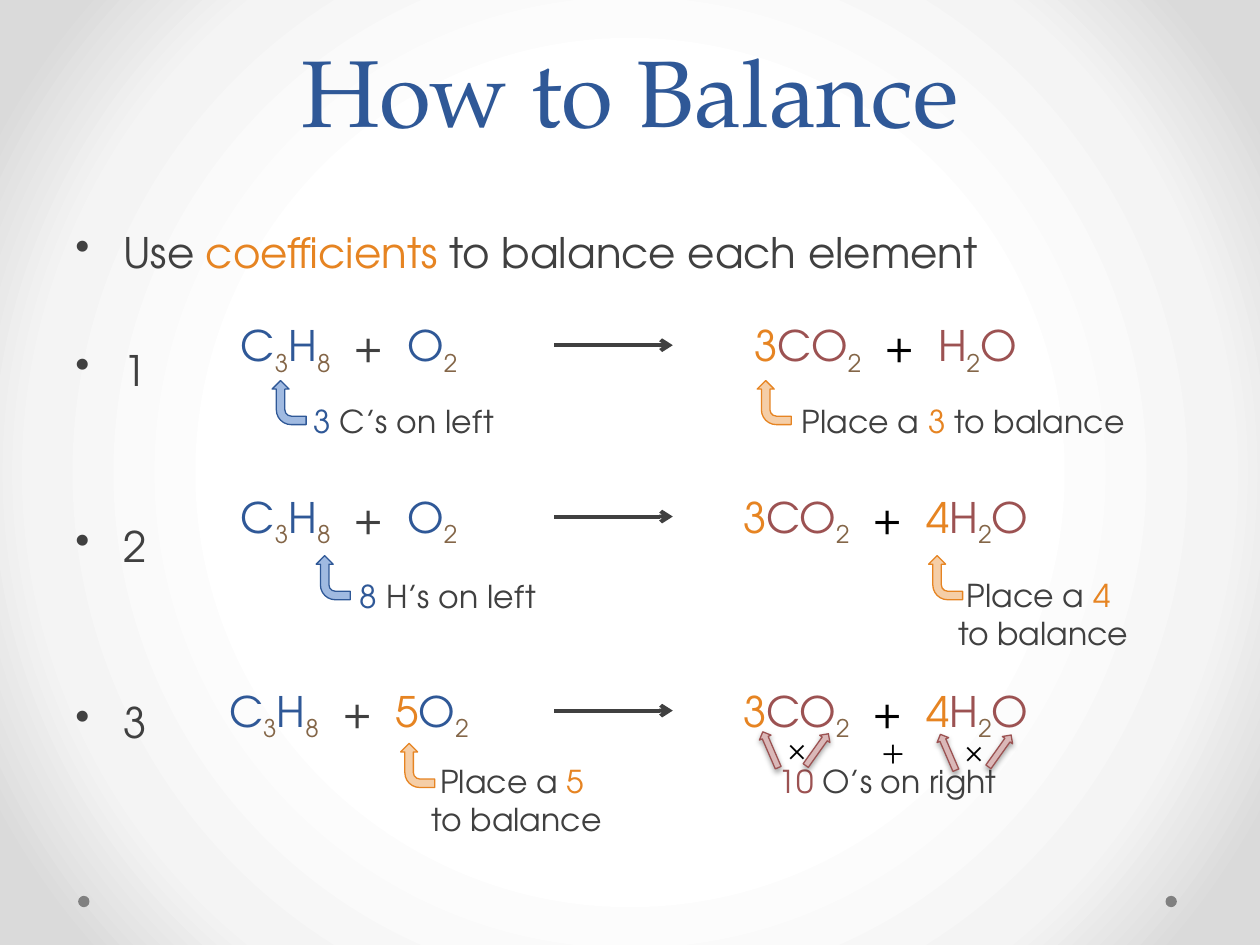
"""Build a slide on balancing a chemical equation with coefficients."""
import dataclasses
import itertools

import pptx
import pptx.dml.color
import pptx.enum.shapes
import pptx.enum.text
import pptx.oxml
import pptx.oxml.ns
import pptx.util

Inches, Pt = pptx.util.Inches, pptx.util.Pt
SHAPE = pptx.enum.shapes.MSO_SHAPE
ALIGN = pptx.enum.text.PP_ALIGN
ANCHOR = pptx.enum.text.MSO_ANCHOR
AUTO_SIZE = pptx.enum.text.MSO_AUTO_SIZE
NAMESPACES = pptx.oxml.ns.nsdecls("a", "p")


@dataclasses.dataclass(frozen=True)
class Theme:
    """Colours, fonts and type sizes of the slide."""
    text: str = "404040"
    black: str = "000000"
    reactant: str = "2F5897"
    reactant_fill: str = "A0BAE1"
    product: str = "9C5252"
    product_fill: str = "DAB8B8"
    coefficient: str = "E68422"
    coefficient_fill: str = "F5CEA7"
    subscript: str = "846648"
    dot: str = "808080"
    background: tuple = ((50, "FFFFFF"), (76, "F4F4F4"), (92, "DADADA"))
    heading_font: str = "TeX Gyre Pagella"
    body_font: str = "TeX Gyre Adventor"
    title_size: int = 54
    body_size: int = 24
    note_size: int = 18


THEME = Theme()


def rgb(colour):
    """Turn a hex string into a colour value."""
    return pptx.dml.color.RGBColor.from_string(colour)


def apply_format(target, values):
    """Set every attribute named in a dict of format values."""
    for name, value in values.items():
        setattr(target, name, value)


def add_background(slide):
    """Give the slide a circular gradient."""
    stops = "".join(f'<a:gs pos="{position * 1000}"><a:srgbClr val="{colour}"/></a:gs>'
                    for position, colour in THEME.background)
    slide.element.cSld.insert(0, pptx.oxml.parse_xml(
        f'<p:bg {NAMESPACES}><p:bgPr><a:gradFill rotWithShape="1"><a:gsLst>{stops}</a:gsLst>'
        '<a:path path="circle"><a:fillToRect l="50000" t="50000" r="50000" b="50000"/></a:path>'
        '</a:gradFill><a:effectLst/></p:bgPr></p:bg>'))


def add_runs(paragraph, runs, size, font=THEME.body_font):
    """Add coloured runs, lowering those in the subscript colour."""
    for text, colour in runs:
        run = paragraph.add_run()
        run.text = text
        apply_format(run.font, {"size": Pt(size), "name": font})
        run.font.color.rgb = rgb(colour)
        if colour == THEME.subscript:
            run.font._element.set("baseline", "-25000")


def add_text(shapes, box, lines, size, font=THEME.body_font, frame=None, layout=None):
    """Add a text box with one paragraph for each list of runs."""
    text_frame = shapes.add_textbox(*map(Inches, box)).text_frame
    apply_format(text_frame, {"word_wrap": True, "auto_size": AUTO_SIZE.SHAPE_TO_FIT_TEXT,
                              **(frame or {})})
    for index, runs in enumerate(lines):
        paragraph = text_frame.add_paragraph() if index else text_frame.paragraphs[0]
        apply_format(paragraph, layout or {"alignment": ALIGN.CENTER})
        add_runs(paragraph, runs, size, font)
    return text_frame


def add_filled_shape(shapes, kind, box, fill, line=None, rotation=0):
    """Add a preset shape with a plain fill and an optional thin outline."""
    shape = shapes.add_shape(kind, *map(Inches, box))
    shape.shadow.inherit = False
    shape.rotation = rotation
    shape.fill.solid()
    shape.fill.fore_color.rgb = rgb(fill)
    if line:
        shape.line.color.rgb = rgb(line)
        shape.line.width = Pt(0.75)
    else:
        shape.line.fill.background()
    return shape


def add_bullets(slide):
    """Add the opening statement and the three numbered steps."""
    lines = [[("Use ", THEME.text), ("coefficients", THEME.coefficient),
              (" to balance each element", THEME.text)],
             *([(number, THEME.text)] for number in "123")]
    text_frame = add_text(slide.shapes, (0.5, 1.75, 9, 4.95), lines, THEME.body_size,
                          frame={"auto_size": AUTO_SIZE.NONE}, layout={"alignment": ALIGN.LEFT})
    for paragraph, space in zip(text_frame.paragraphs, (4.8, 38.3, 71.8, 71.8)):
        paragraph.space_before = Pt(space)
        properties = paragraph._p.get_or_add_pPr()
        properties.set("marL", str(Inches(0.38)))
        properties.set("indent", str(Inches(-0.38)))
        properties.append(pptx.oxml.parse_xml(f'<a:buChar {NAMESPACES} char="•"/>'))


def species(coefficient, formula, colour):
    """Split a formula into coefficient, symbol and subscript runs."""
    runs = [(coefficient, THEME.coefficient)] if coefficient else []
    for is_digit, letters in itertools.groupby(formula, str.isdigit):
        runs.append(("".join(letters), THEME.subscript if is_digit else colour))
    return runs


def add_reaction(slide, top, oxygen, dioxide, water):
    """Add one grouped equation with the given coefficients."""
    shapes = slide.shapes.add_group_shape().shapes
    left = [*species("", "C3H8", THEME.reactant), ("  +  ", THEME.text),
            *species(oxygen, "O2", THEME.reactant)]
    right = [*species(dioxide, "CO2", THEME.product), ("  +  ", THEME.black),
             *species(water, "H2O", THEME.product)]
    add_text(shapes, (1.31, top, 2.92, 0.5), [left], THEME.body_size)
    add_text(shapes, (5.4, top, 3.26, 0.5), [right], THEME.body_size)
    middle = Inches(top + 0.25)
    arrow = shapes.add_connector(pptx.enum.shapes.MSO_CONNECTOR.STRAIGHT,
                                 Inches(4.4), middle, Inches(5.34), middle)
    arrow.line.color.rgb = rgb(THEME.text)
    arrow.line.width = Pt(2.25)
    arrow.line._get_or_add_ln().append(
        pptx.oxml.parse_xml(f'<a:tailEnd {NAMESPACES} type="arrow"/>'))
    arrow._element.spPr.append(pptx.oxml.parse_xml(f"<a:effectLst {NAMESPACES}/>"))


def add_note(shapes, box, lines, arrow_left, arrow_top, colour, fill):
    """Add a note and the bent arrow that leads from it to the equation."""
    add_text(shapes, box, lines, THEME.note_size)
    add_filled_shape(shapes, SHAPE.BENT_ARROW, (arrow_left, arrow_top, 0.35, 0.27),
                     fill, colour, 270)


def add_count_note(shapes, box, count, rest, arrow_left, arrow_top):
    """Add a note that counts atoms on the left."""
    add_note(shapes, box, [[(count, THEME.reactant), (rest, THEME.text)]],
             arrow_left, arrow_top, THEME.reactant, THEME.reactant_fill)


def add_place_note(shapes, box, number, arrow_left, arrow_top, two_lines=True):
    """Add a note that says which coefficient to place."""
    start = [("Place a ", THEME.text), (number, THEME.coefficient)]
    lines = ([start, [("to balance", THEME.text)]] if two_lines
             else [[*start, (" to balance", THEME.text)]])
    add_note(shapes, box, lines, arrow_left, arrow_top,
             THEME.coefficient, THEME.coefficient_fill)


def add_oxygen_count(slide):
    """Add the count of oxygen on the right with its arrows and signs."""
    add_text(slide.shapes, (6.01, 6, 2.07, 0.4),
             [[("10", THEME.product), (" O’s on right", THEME.text)]], THEME.note_size)
    for left, top, rotation in ((5.96, 5.9, 246.6), (6.33, 5.9, 305.5),
                                (7.78, 5.91, 305.5), (7.37, 5.92, 246.6)):
        arrow = add_filled_shape(slide.shapes, SHAPE.RIGHT_ARROW, (left, top, 0.31, 0.1),
                                 THEME.product_fill, THEME.product, rotation)
        effects = arrow._element.spPr.find(pptx.oxml.ns.qn("a:effectLst"))
        effects.append(pptx.oxml.parse_xml(
            f'<a:outerShdw {NAMESPACES} blurRad="{Pt(3.1)}" dist="{Pt(1.8)}" dir="5400000" '
            f'rotWithShape="0"><a:srgbClr val="{THEME.black}"><a:alpha val="35000"/>'
            '</a:srgbClr></a:outerShdw>'))
    for sign, left, top in (("+", 6.9, 5.75), ("×", 6.15, 5.74), ("×", 7.56, 5.75)):
        add_text(slide.shapes, (left, top, 0.33, 0.4), [[(sign, THEME.black)]], THEME.note_size,
                 THEME.heading_font, {"word_wrap": False}, {"alignment": ALIGN.LEFT})


def main():
    """Build and save the slide."""
    presentation = pptx.Presentation()
    apply_format(presentation, {"slide_width": Inches(10), "slide_height": Inches(7.5)})
    slide = presentation.slides.add_slide(presentation.slide_layouts[6])
    add_background(slide)
    for left in (9.25, 0.62):
        add_filled_shape(slide.shapes, SHAPE.OVAL, (left, 7.11, 0.09, 0.09), THEME.dot)
    add_text(slide.shapes, (0.5, 0, 9, 1.21), [[("How to Balance", THEME.reactant)]],
             THEME.title_size, THEME.heading_font,
             {"auto_size": AUTO_SIZE.NONE, "vertical_anchor": ANCHOR.BOTTOM},
             {"alignment": ALIGN.CENTER, "line_spacing": Pt(58)})
    add_bullets(slide)
    add_reaction(slide, 2.49, "", "3", "")
    notes = slide.shapes.add_group_shape().shapes
    add_count_note(notes, (2.35, 3.14, 1.71, 0.4), "3", " C’s on left", 2.12, 3.06)
    add_place_note(notes, (6.19, 3.14, 2.91, 0.4), "3", 5.97, 3.06, two_lines=False)
    add_reaction(slide, 3.85, "", "3", "4")
    notes = slide.shapes.add_group_shape().shapes
    add_count_note(notes, (2.7, 4.53, 1.71, 0.4), "8 ", "H’s on left", 2.47, 4.45)
    add_place_note(notes, (7.43, 4.52, 1.7, 0.71), "4 ", 7.33, 4.45)
    add_reaction(slide, 5.39, "5", "3", "4")
    add_place_note(slide.shapes, (3.25, 6, 1.7, 0.71), "5 ", 3.14, 5.94)
    add_oxygen_count(slide)
    presentation.save("out.pptx")


if __name__ == "__main__":
    main()
